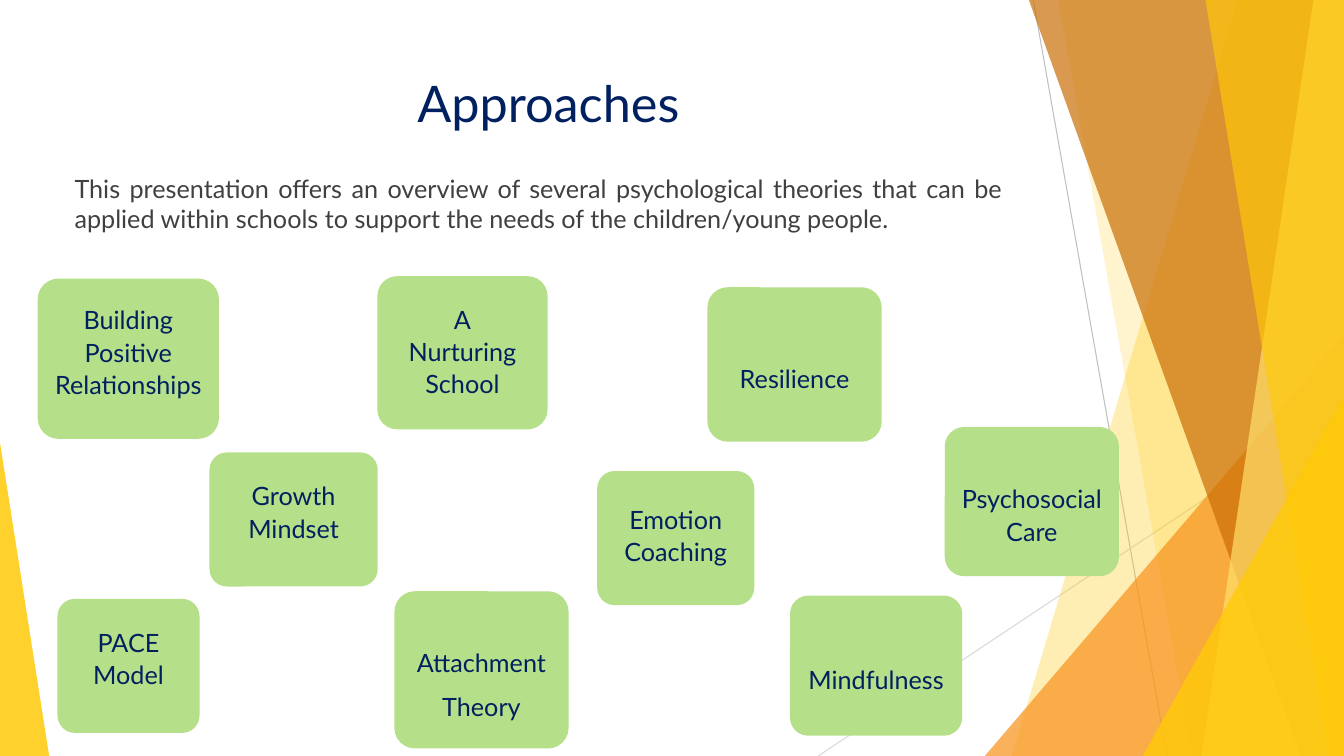
from pptx import Presentation, util as u
from pptx.dml.color import RGBColor
from pptx.enum import shapes, text
from pptx.oxml.ns import qn
from lxml import etree

WIDE, HIGH = 33.87, 19.05
NAVY, GREY, GREEN, GOLD = "002060", "404040", "B6DF89", "FFCA08"


def color(code):
    return RGBColor.from_string(code)


def write(frame, words, size=18, ink=NAVY, align="CENTER", space=1.0, after=0, top=0.13):
    frame.word_wrap = True
    frame.vertical_anchor = text.MSO_ANCHOR.TOP
    frame.margin_left = frame.margin_right = u.Cm(0.25)
    frame.margin_top, frame.margin_bottom = u.Cm(top), u.Cm(0)
    for i, line in enumerate(words.split("\n")):
        para = frame.paragraphs[0] if i == 0 else frame.add_paragraph()
        para.alignment = getattr(text.PP_ALIGN, align)
        para.line_spacing = space
        para.space_after = u.Pt(after)
        run = para.add_run()
        run.text = line
        run.font.name = "Lato"
        run.font.size = u.Pt(size)
        run.font.color.rgb = color(ink)


class Slide:
    def __init__(self, deck):
        self.items = deck.slides.add_slide(deck.slide_layouts[6]).shapes

    def paint(self, shape, fill, alpha=100):
        shape.shadow.inherit = False
        shape.line.fill.background()
        shape.fill.solid()
        shape.fill.fore_color.rgb = color(fill)
        if alpha < 100:
            tint = shape.fill._xPr.find(qn("a:solidFill"))[0]
            etree.SubElement(tint, qn("a:alpha")).set("val", str(alpha * 1000))

    def line(self, x1, y1, x2, y2, ink):
        wire = self.items.add_connector(
            shapes.MSO_CONNECTOR.STRAIGHT, *map(u.Cm, (x1, y1, x2, y2)))
        wire.line.color.rgb = color(ink)
        wire.line.width = u.Pt(0.75)
        etree.SubElement(wire._element.spPr, qn("a:effectLst"))

    def facet(self, upper, lower, fill, alpha):
        ends = [(WIDE, 0), (WIDE, HIGH), (lower, HIGH)]
        form = self.items.build_freeform(u.Cm(upper), 0)
        form.add_line_segments([(u.Cm(x), u.Cm(y)) for x, y in ends])
        self.paint(form.convert_to_shape(), fill, alpha)

    def wedge(self, x, y, wide, peak, fill, alpha):
        shape = self.items.add_shape(
            shapes.MSO_SHAPE.ISOSCELES_TRIANGLE, *map(u.Cm, (x, y, wide, HIGH - y)))
        shape.adjustments[0] = peak
        self.paint(shape, fill, alpha)

    def card(self, words, x, y, wide, high, top):
        shape = self.items.add_shape(
            shapes.MSO_SHAPE.ROUNDED_RECTANGLE, *map(u.Cm, (x, y, wide, high)))
        shape.adjustments[0] = 0.13
        self.paint(shape, GREEN)
        after = 0 if words.startswith("A\n") else 8
        write(shape.text_frame, words, space=1.07, after=after, top=top)

    def label(self, words, x, y, wide, high, **style):
        box = self.items.add_textbox(*map(u.Cm, (x, y, wide, high)))
        write(box.text_frame, words, **style)


CARDS = [
    ("Building Positive Relationships", 0.95, 7.02, 4.57, 4.04, 0.45),
    ("PACE Model", 1.45, 15.09, 3.58, 3.38, 0.53),
    ("Mindfulness", 19.91, 15.01, 4.34, 3.53, 1.54),
    ("Resilience", 17.83, 7.24, 4.39, 3.89, 1.71),
    ("Attachment\nTheory", 9.94, 14.9, 4.39, 3.96, 1.21),
    ("A\nNurturing School", 9.51, 6.96, 4.29, 3.86, 0.5),
    ("Psychosocial Care", 23.81, 10.76, 4.39, 3.76, 1.23),
    ("Emotion Coaching", 15.05, 11.87, 3.96, 3.38, 0.66),
    ("Growth Mindset", 5.28, 11.4, 4.24, 3.38, 0.53),
]


def main():
    deck = Presentation()
    deck.slide_width, deck.slide_height = u.Cm(WIDE), u.Cm(HIGH)
    page = Slide(deck)

    page.line(26.04, 0, 29.41, HIGH, "BFBFBF")
    page.line(WIDE, 10.24, 20.62, HIGH, "D9D9D9")
    page.facet(31.19, 25.5, GOLD, 30)
    page.facet(26.67, 30.05, GOLD, 20)
    page.wedge(24.82, 8.46, 9.05, 1, "F8931D", 72)
    page.facet(25.93, 32.79, "CA6F06", 70)
    page.facet(33.1, 30.28, "FFDF6B", 70)
    page.facet(30.38, 33.48, GOLD, 65)
    page.wedge(28.8, 9.98, 5.07, 1, GOLD, 80)
    page.wedge(0, 11.15, 1.24, 0, GOLD, 85)

    page.label("Approaches", 1.88, 1.7, 23.88, 3.66, size=36)
    page.label(
        "This presentation offers an overview of several psychological theories that can be "
        "applied within schools to support the needs of the children/young people.",
        1.63, 4.24, 23.88, 10.77, ink=GREY, align="JUSTIFY")
    for card in CARDS:
        page.card(*card)

    deck.save("out.pptx")


if __name__ == "__main__":
    main()
